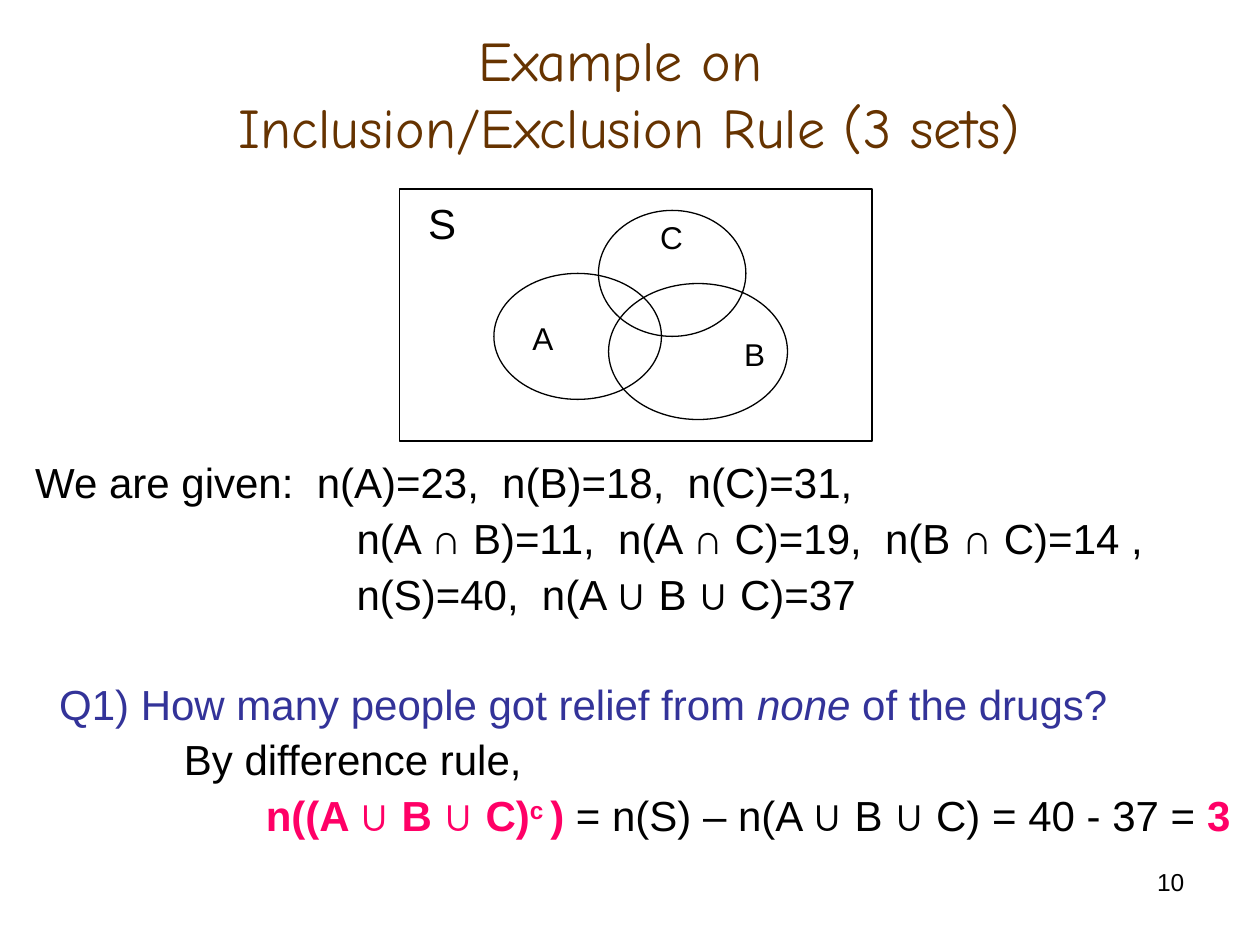
from pptx import Presentation
from pptx.dml.color import RGBColor
from pptx.enum import shapes, text
from pptx.util import Inches, Pt

BLACK, BROWN, BLUE, PINK = "000000", "663300", "333399", "FF0066"
CENTER, RIGHT = text.PP_ALIGN.CENTER, text.PP_ALIGN.RIGHT
MIDDLE = text.MSO_ANCHOR.MIDDLE


def color(value):
    """Turn a hex string into a colour."""
    return RGBColor.from_string(value)


def add_span(para, words, size, ink=BLACK, font="Arial", bold=False, italic=False, raised=False):
    """Append one formatted run to a paragraph."""
    span = para.add_run()
    span.text = words
    span.font.name, span.font.size = font, Pt(size)
    span.font.bold, span.font.italic = bold, italic
    span.font.color.rgb = color(ink)
    if raised:
        span._r.get_or_add_rPr().set("baseline", "30000")


def add_frame(page, left, top, width, height, anchor=text.MSO_ANCHOR.TOP):
    """Add a wrapping text box without margins and return its frame."""
    box = page.shapes.add_textbox(Inches(left), Inches(top), Inches(width), Inches(height))
    frame = box.text_frame
    frame.word_wrap = True
    frame.vertical_anchor = anchor
    frame.margin_left = frame.margin_right = frame.margin_top = frame.margin_bottom = 0
    return frame


def add_title(page, left, top, width, height):
    """Place the two-line heading."""
    para = add_frame(page, left, top, width, height, MIDDLE).paragraphs[0]
    para.alignment = CENTER
    add_span(para, "Example on ", 32, BROWN, "Comic Neue")
    para.add_line_break()
    add_span(para, "Inclusion/Exclusion Rule (3 sets)", 32, BROWN, "Comic Neue")


def add_venn(page, left, top, width, height):
    """Draw the universe, its three sets and their labels."""
    oval, rect = shapes.MSO_SHAPE.OVAL, shapes.MSO_SHAPE.RECTANGLE
    regions = [
        ("A", 18, oval, (0.75, 0.67, 1.33, 1), (1.14, 1.18)),
        ("B", 18, oval, (1.66, 0.75, 1.42, 1.08), (2.82, 1.31)),
        ("C", 18, oval, (1.58, 0.17, 1.17, 1), (2.16, 0.38)),
        ("S", 24, rect, (0, 0, width, height), (0.34, 0.27)),
    ]
    side = 0.4
    for name, size, kind, (x, y, wide, high), (label_x, label_y) in regions:
        outline = page.shapes.add_shape(
            kind, Inches(left + x), Inches(top + y), Inches(wide), Inches(high))
        outline.shadow.inherit = False
        outline.fill.background()
        outline.line.color.rgb = color(BLACK)
        outline.line.width = Pt(0.75)
        frame = add_frame(page, left + label_x - side / 2, top + label_y - side / 2,
                          side, side, MIDDLE)
        frame.paragraphs[0].alignment = CENTER
        add_span(frame.paragraphs[0], name, size)


def add_solution(page, left, top, width, height):
    """Write the given facts, the question and its answer."""
    strong = {"ink": PINK, "bold": True}
    lines = [
        (0.28, 0, [("We are given:  n(A)=23,  n(B)=18,  n(C)=31,", {})]),
        (2.83, 6, [("n(A ∩ B)=11,  n(A ∩ C)=19,  n(B ∩ C)=14 ,", {})]),
        (2.83, 6, [("n(S)=40,  n(A ∪ B ∪ C)=37", {})]),
        (0.47, 36.8, [("Q1) How many people got relief from ", {"ink": BLUE}),
                      ("none", {"ink": BLUE, "italic": True}),
                      (" of the drugs?", {"ink": BLUE})]),
        (1.46, 6, [("By difference rule,", {})]),
        (2.11, 6, [("n((A ∪ B ∪ C)", strong),
                   ("c ", {**strong, "raised": True}),
                   (")", strong),
                   (" = n(S) – n(A ∪ B ∪ C) = 40 - 37 =", {}),
                   (" 3", strong)]),
    ]
    frame = add_frame(page, left, top, width, height)
    for index, (indent, gap, spans) in enumerate(lines):
        para = frame.add_paragraph() if index else frame.paragraphs[0]
        para.line_spacing = 0.9
        para.space_before = Pt(gap)
        properties = para._p.get_or_add_pPr()
        properties.set("marL", str(Inches(indent)))
        properties.set("indent", "0")
        for words, style in spans:
            add_span(para, words, 24, **style)


def add_page_number(page, left, top, width, height):
    """Place the page number at the right."""
    para = add_frame(page, left, top, width, height).paragraphs[0]
    para.alignment = RIGHT
    add_span(para, "10", 14)


def main():
    """Build and save the deck."""
    deck = Presentation()
    deck.slide_width, deck.slide_height = Inches(10), Inches(7.5)
    page = deck.slides.add_slide(deck.slide_layouts[6])
    add_title(page, 0.5, 0.3, 9, 0.87)
    add_venn(page, 3.17, 1.5, 3.75, 2)
    add_solution(page, 0, 3.67, 10, 3)
    add_page_number(page, 7.17, 6.88, 2.23, 0.4)
    deck.save("out.pptx")


if __name__ == "__main__":
    main()
